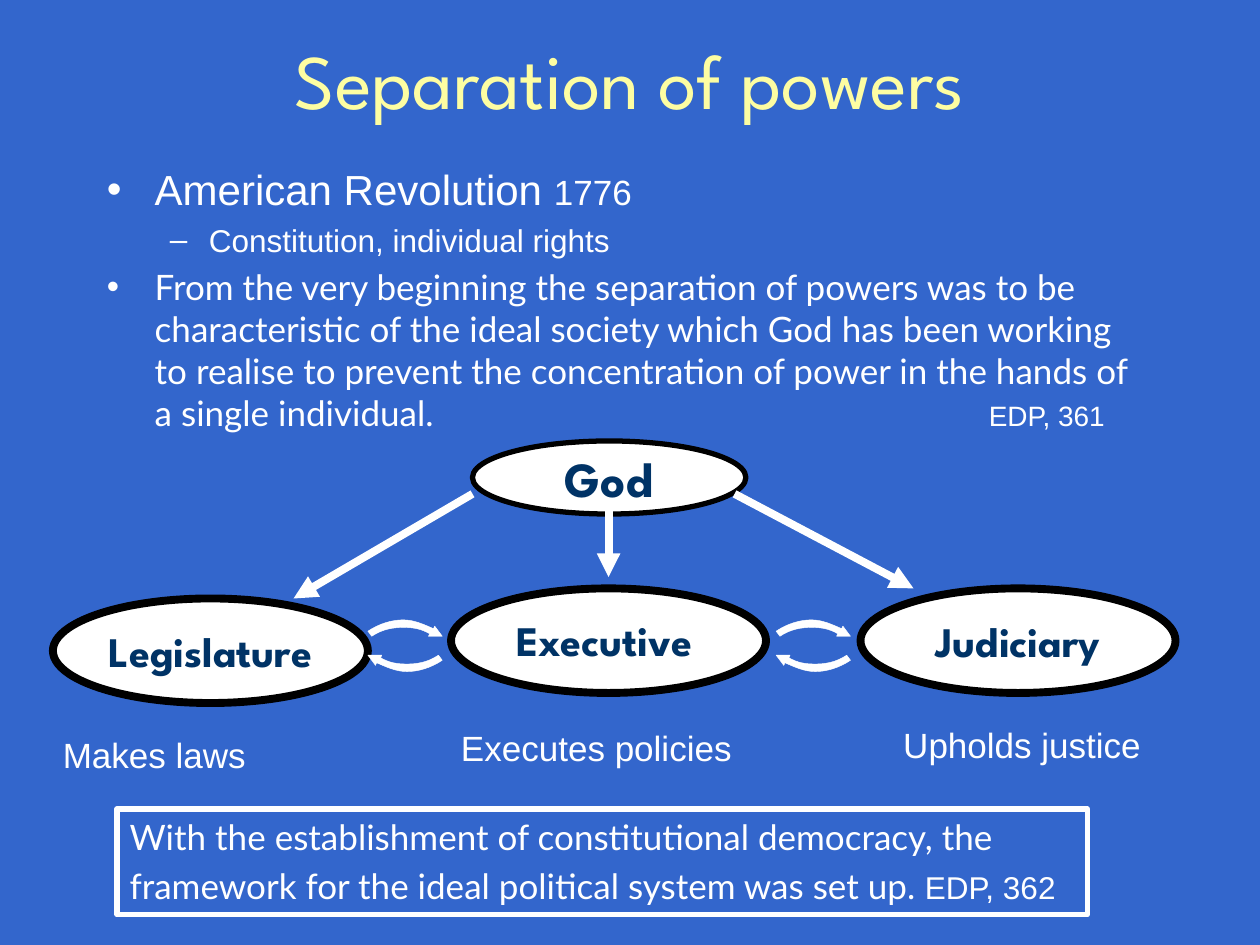
import pptx
import pptx.dml.color
import pptx.enum.shapes
import pptx.enum.text
import pptx.oxml.ns
import pptx.util
from lxml import etree

Inches = pptx.util.Inches
Pt = pptx.util.Pt
SHAPES = pptx.enum.shapes.MSO_SHAPE
ALIGN = pptx.enum.text.PP_ALIGN
ANCHOR = pptx.enum.text.MSO_ANCHOR
GROW = pptx.enum.text.MSO_AUTO_SIZE.SHAPE_TO_FIT_TEXT
qn = pptx.oxml.ns.qn

COLORS = {
    "background": "3366CC",
    "title": "FDFDA2",
    "light": "FFFFFF",
    "outline": "000000",
    "branch": "003366",
}
HEADING_FONT, BODY_FONT, QUOTE_FONT = "League Spartan", "Arial", "Lato"


def rgb(name):
    """Return the named palette colour."""
    return pptx.dml.color.RGBColor.from_string(COLORS[name])


def add_run(paragraph, text, size, font=BODY_FONT, color="light", bold=False):
    """Append a formatted run to a paragraph."""
    run = paragraph.add_run()
    run.text = text
    run.font.size = Pt(size)
    run.font.name = font
    run.font.bold = bold
    run.font.color.rgb = rgb(color)


def style_shape(shape, fill, line, width):
    """Give a shape its fill and outline without a shadow."""
    shape.shadow.inherit = False
    if fill:
        shape.fill.solid()
        shape.fill.fore_color.rgb = rgb(fill)
    else:
        shape.fill.background()
    shape.line.color.rgb = rgb(line)
    shape.line.width = Pt(width)


def add_title(slide, box):
    """Place and format the slide title."""
    title = slide.shapes.title
    title.left, title.top, title.width, title.height = map(Inches, box)
    frame = title.text_frame
    frame.vertical_anchor = ANCHOR.MIDDLE
    paragraph = frame.paragraphs[0]
    paragraph.alignment = ALIGN.CENTER
    add_run(paragraph, "Separation of powers", 44, HEADING_FONT, "title")


def set_bullet(paragraph, character, margin, hanging, tab=None):
    """Set a hanging bullet and an optional tab stop."""
    properties = paragraph._p.get_or_add_pPr()
    properties.set("marL", str(Inches(margin)))
    properties.set("indent", str(-Inches(hanging)))
    etree.SubElement(properties, qn("a:buFont"), typeface=BODY_FONT)
    etree.SubElement(properties, qn("a:buChar"), char=character)
    if tab:
        stops = etree.SubElement(properties, qn("a:tabLst"))
        etree.SubElement(stops, qn("a:tab"), pos=str(Inches(tab)), algn="l")


def add_body(slide, box):
    """Write the bulleted text."""
    frame = slide.shapes.add_textbox(*map(Inches, box)).text_frame
    frame.word_wrap = True
    quote = (
        "From the very beginning the separation of powers was to be "
        "characteristic of the ideal society which God has been working "
        "to realise to prevent the concentration of power in the hands of "
        "a single individual.\t"
    )
    items = [
        ("•", 0, 0.38, 0.38, None, 4.8,
         [("American Revolution ", 24, BODY_FONT), ("1776", 20, BODY_FONT)]),
        ("–", 1, 0.81, 0.31, None, 4,
         [("Constitution, individual rights", 18, BODY_FONT)]),
        ("•", 0, 0.38, 0.38, 7, 4,
         [(quote, 20, QUOTE_FONT), ("EDP, 361", 16, BODY_FONT)]),
    ]
    for index, (bullet, level, margin, hanging, tab, space, runs) in enumerate(items):
        paragraph = frame.add_paragraph() if index else frame.paragraphs[0]
        paragraph.level = level
        paragraph.space_before = Pt(space)
        set_bullet(paragraph, bullet, margin, hanging, tab)
        for run in runs:
            add_run(paragraph, *run)


def add_ellipse(slide, box, text, size, width):
    """Draw an outlined ellipse with an optional centred name."""
    ellipse = slide.shapes.add_shape(SHAPES.OVAL, *map(Inches, box))
    style_shape(ellipse, "light", "outline", width)
    if text:
        frame = ellipse.text_frame
        frame.word_wrap = False
        frame.vertical_anchor = ANCHOR.MIDDLE
        paragraph = frame.paragraphs[0]
        paragraph.alignment = ALIGN.CENTER
        add_run(paragraph, text, size, HEADING_FONT, "branch", True)


def add_arrow(slide, start, end):
    """Draw a thick straight arrow."""
    connector = slide.shapes.add_connector(
        pptx.enum.shapes.MSO_CONNECTOR.STRAIGHT, *map(Inches, start + end))
    connector.line.color.rgb = rgb("light")
    connector.line.width = Pt(4.5)
    etree.SubElement(connector.line._get_or_add_ln(), qn("a:tailEnd"), type="triangle")
    etree.SubElement(connector._element.spPr, qn("a:effectLst"))


def bend_segments(shape):
    """Turn each run of three line segments into one cubic curve."""
    lines = list(shape._element.iter(qn("a:lnTo")))
    for first, second, third in zip(lines[::3], lines[1::3], lines[2::3]):
        curve = etree.Element(qn("a:cubicBezTo"))
        first.addprevious(curve)
        for line in (first, second, third):
            curve.append(line[0])
            line.getparent().remove(line)


def add_curved_arrow(slide, left, top, rotation):
    """Draw a slim curved arrow, turned by the given angle."""
    start, tip_top, tip, tip_bottom = (0, 0.09), (0.53, 0.05), (0.59, 0.13), (0.48, 0.13)
    neck, tail = (0.49, 0.11), (0.03, 0.13)
    outline = [
        start,
        (0.09, 0.03), (0.19, 0), (0.28, 0),
        (0.37, 0), (0.45, 0.04), (0.52, 0.07),
        *[point for point in (tip_top, tip, tip_bottom, neck) for _ in range(3)],
        (0.42, 0.07), (0.36, 0.06), (0.28, 0.06),
        (0.21, 0.06), (0.12, 0.07), tail,
    ]
    points = [(Inches(left + x), Inches(top + y)) for x, y in outline]
    builder = slide.shapes.build_freeform(*points[0], scale=1.0)
    builder.add_line_segments(points[1:], close=False)
    arrow = builder.convert_to_shape()
    bend_segments(arrow)
    curves = list(arrow._element.iter(qn("a:cubicBezTo")))
    etree.SubElement(curves[-1].getparent(), qn("a:close"))
    style_shape(arrow, "light", "light", 0.25)
    arrow.rotation = rotation


def add_label(slide, box, text, size=20, font=BODY_FONT, color="light", bold=False,
              space=0, wrap=False):
    """Write one line of text."""
    frame = slide.shapes.add_textbox(*map(Inches, box)).text_frame
    frame.word_wrap = wrap
    frame.auto_size = GROW
    paragraph = frame.paragraphs[0]
    paragraph.space_before = Pt(space)
    add_run(paragraph, text, size, font, color, bold)


def add_diagram(slide, left, top):
    """Draw the source of power, its three branches and their tasks."""
    add_ellipse(slide, (left + 3.33, top, 2.17, 0.58), "God", 28, 3)
    for start, end in (((3.33, 0.42), (1.91, 1.25)),
                       ((4.41, 0.5), (4.41, 1.08)),
                       ((5.41, 0.42), (6.83, 1.17))):
        add_arrow(slide, (left + start[0], top + start[1]), (left + end[0], top + end[1]))
    for x, y, name in ((0, 1.25, "Legislature"), (3.16, 1.17, ""), (6.41, 1.17, "Judiciary")):
        add_ellipse(slide, (left + x, top + y, 2.5, 0.83), name, 24, 4.5)
    add_label(slide, (left + 3.58, top + 1.33, 1.92, 0.5), "Executive", 24,
              HEADING_FONT, "branch", True, 12, True)
    for x in (2.5, 5.74):
        for y, rotation in ((1.42, 0), (1.7, 180)):
            add_curved_arrow(slide, left + x, top + y, rotation)
    for x, y, width, task in ((-0.02, 2.27, 1.66, "Makes laws"),
                              (3.14, 2.22, 2.35, "Executes policies"),
                              (6.65, 2.19, 2.09, "Upholds justice")):
        add_label(slide, (left + x, top + y, width, 0.43), task)


def add_conclusion(slide, box):
    """Write the framed conclusion."""
    frame_shape = slide.shapes.add_shape(SHAPES.RECTANGLE, *map(Inches, box))
    style_shape(frame_shape, None, "light", 3)
    frame = frame_shape.text_frame
    frame.word_wrap = True
    frame.auto_size = GROW
    frame.vertical_anchor = ANCHOR.TOP
    lines = ("With the establishment of constitutional democracy, the",
             "framework for the ideal political system was set up. ")
    for index, line in enumerate(lines):
        paragraph = frame.add_paragraph() if index else frame.paragraphs[0]
        paragraph.alignment = ALIGN.LEFT
        paragraph.space_before = Pt(4)
        add_run(paragraph, line, 20, QUOTE_FONT)
    add_run(paragraph, "EDP, 362", 18)


def main():
    """Build and save the presentation."""
    presentation = pptx.Presentation()
    presentation.slide_width, presentation.slide_height = Inches(10), Inches(7.5)
    slide = presentation.slides.add_slide(presentation.slide_layouts[5])
    slide.background.fill.solid()
    slide.background.fill.fore_color.rgb = rgb("background")
    add_title(slide, (0.75, 0, 8.5, 1.25))
    add_body(slide, (0.75, 1.25, 8.5, 2.42))
    add_diagram(slide, 0.42, 3.5)
    add_conclusion(slide, (0.93, 6.42, 7.7, 0.84))
    presentation.save("out.pptx")


if __name__ == "__main__":
    main()
